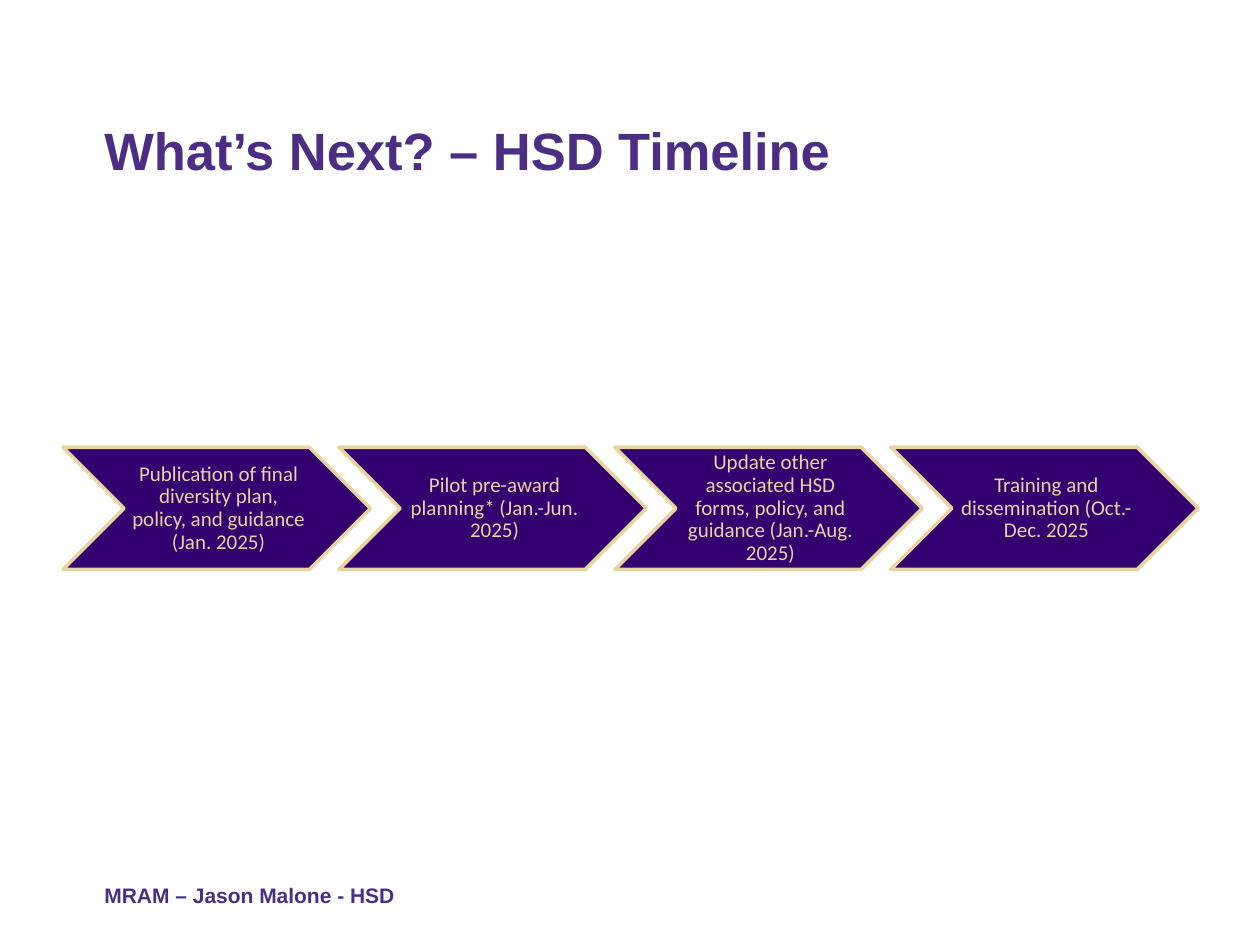
from dataclasses import dataclass

from pptx import Presentation
from pptx.dml.color import RGBColor as Color
from pptx.enum.shapes import MSO_SHAPE as Kind
from pptx.enum.text import MSO_ANCHOR as Anchor, PP_ALIGN as Align
from pptx.slide import Slide
from pptx.util import Inches, Pt


@dataclass(frozen=True)
class Theme:
    head: Color = Color.from_string("4B2E83")
    fill: Color = Color.from_string("33006F")
    edge: Color = Color.from_string("E8D3A1")
    label: Color = Color.from_string("E8D3A2")
    big: int = 30
    small: int = 12
    stroke: int = 2
    sans: str = "Arial"
    body: str = "Calibri"


@dataclass(frozen=True)
class Box:
    left: float
    top: float
    width: float
    height: float

    def place(self) -> tuple:
        return tuple(map(Inches, (self.left, self.top, self.width, self.height)))


@dataclass(frozen=True)
class Style:
    size: int
    font: str
    color: Color
    bold: bool
    space: float
    align: Align
    anchor: Anchor
    inset: tuple


THEME = Theme()
EDGE = (0.1, 0.05, 0.1, 0.05)
TITLE = Style(THEME.big, THEME.sans, THEME.head, True, 0.9, Align.LEFT, Anchor.BOTTOM, EDGE)
FOOT = Style(THEME.small, THEME.sans, THEME.head, True, 1.5, Align.LEFT, Anchor.BOTTOM, EDGE)
STEP = Style(THEME.small, THEME.body, THEME.label, False, 0.9, Align.CENTER, Anchor.MIDDLE,
             (0.05, 0.02, 0.02, 0.02))

FIRST = Box(0.5, 3.55, 2.44, 0.97)
PITCH = 2.19
STEPS = (
    "Publication of final diversity plan, policy, and guidance (Jan. 2025)",
    "Pilot pre-award planning* (Jan.-Jun. 2025)",
    "Update other associated HSD forms, policy, and guidance (Jan.-Aug. 2025)",
    "Training and dissemination (Oct.-Dec. 2025",
)


def add_text(slide: Slide, box: Box, text: str, style: Style) -> None:
    frame = slide.shapes.add_textbox(*box.place()).text_frame
    frame.word_wrap = True
    frame.vertical_anchor = style.anchor
    (frame.margin_left, frame.margin_top,
     frame.margin_right, frame.margin_bottom) = map(Inches, style.inset)
    para = frame.paragraphs[0]
    para.alignment = style.align
    para.line_spacing = style.space
    run = para.add_run()
    run.text = text
    run.font.size = Pt(style.size)
    run.font.name = style.font
    run.font.bold = style.bold
    run.font.color.rgb = style.color


def add_step(slide: Slide, box: Box, text: str) -> None:
    arrow = slide.shapes.add_shape(Kind.CHEVRON, *box.place())
    arrow.adjustments[0] = 0.5
    arrow.shadow.inherit = False
    arrow.fill.solid()
    arrow.fill.fore_color.rgb = THEME.fill
    arrow.line.color.rgb = THEME.edge
    arrow.line.width = Pt(THEME.stroke)
    notch = box.height / 2
    inner = Box(box.left + notch, box.top, box.width - 2 * notch, box.height)
    add_text(slide, inner, text, STEP)


def main() -> None:
    deck = Presentation()
    deck.slide_width, deck.slide_height = Inches(10), Inches(7.5)
    slide = deck.slides.add_slide(deck.slide_layouts[6])
    add_text(slide, Box(0.73, 0.41, 8.95, 1.08), "What’s Next? – HSD Timeline", TITLE)
    add_text(slide, Box(0.73, 6.89, 7.91, 0.36), "MRAM – Jason Malone - HSD", FOOT)
    for i, text in enumerate(STEPS):
        add_step(slide, Box(FIRST.left + i * PITCH, FIRST.top, FIRST.width, FIRST.height), text)
    deck.save("out.pptx")


if __name__ == "__main__":
    main()
